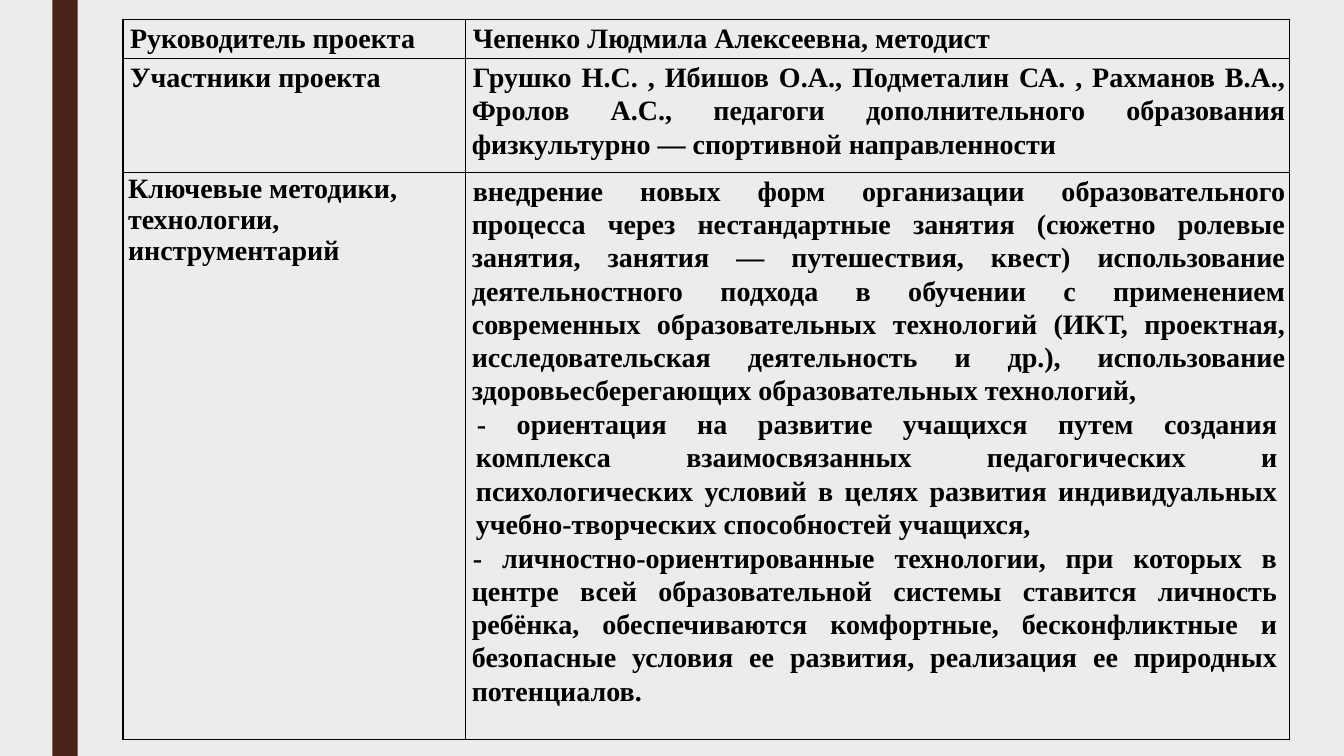
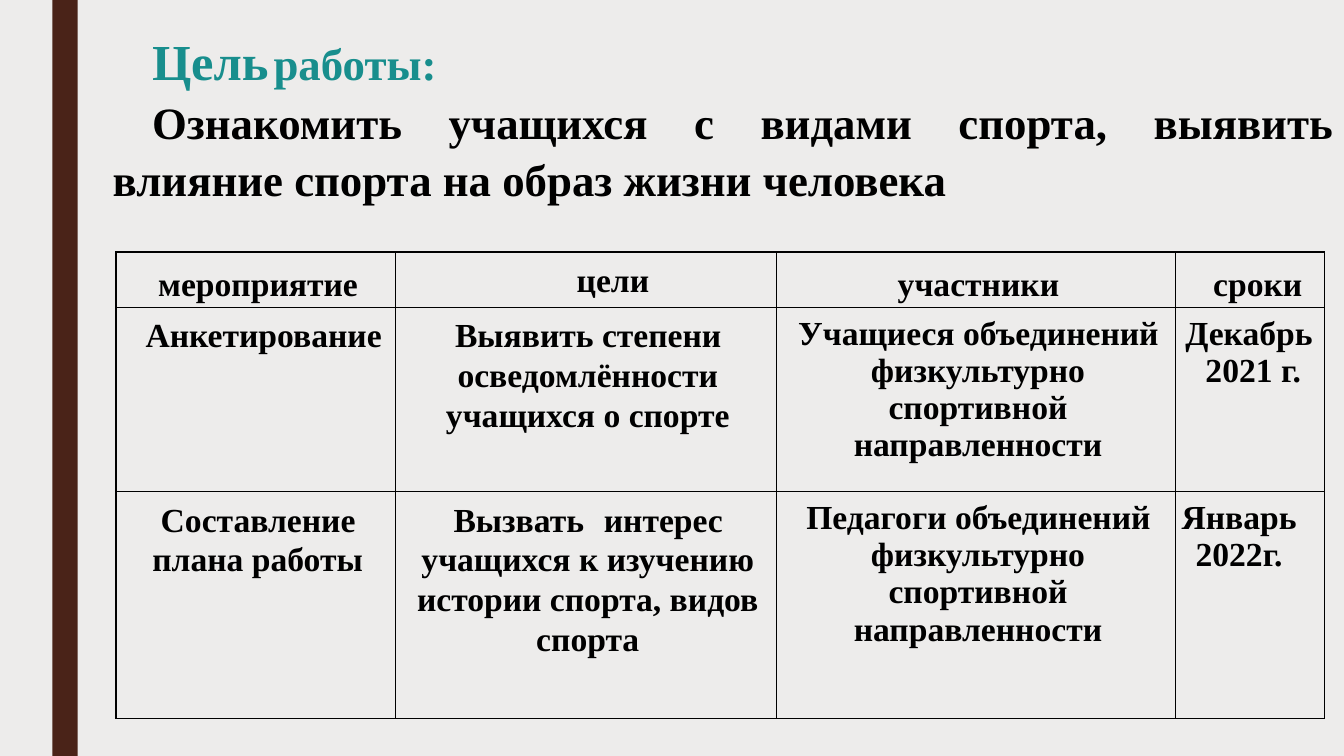
from pptx import Presentation
from pptx.dml.color import RGBColor
from pptx.enum.shapes import MSO_SHAPE
from pptx.enum.text import MSO_ANCHOR, PP_ALIGN
from pptx.oxml import parse_xml
from pptx.oxml.ns import nsdecls
from pptx.util import Inches, Pt

BACKGROUND, BAND, ACCENT, INK = "EDECEB", "4A2318", "188E8D", "000000"
FONT = "Times New Roman"
LEFT, CENTER, JUSTIFY = PP_ALIGN.LEFT, PP_ALIGN.CENTER, PP_ALIGN.JUSTIFY
TOP, BOTTOM = MSO_ANCHOR.TOP, MSO_ANCHOR.BOTTOM


def write_paragraph(paragraph, runs, align, left=0.02, first=0.01, spacing=1.07, right=0):
    formats = {"alignment": align, "line_spacing": spacing,
               "space_before": Pt(0), "space_after": Pt(0)}
    for name, value in formats.items():
        setattr(paragraph, name, value)
    margins = {"marL": left, "marR": right, "indent": first}
    for name, value in margins.items():
        paragraph._p.get_or_add_pPr().set(name, str(Inches(value)))
    for text, size, color in runs:
        run = paragraph.add_run()
        run.text = text
        for name, value in {"name": FONT, "size": Pt(size), "bold": True}.items():
            setattr(run.font, name, value)
        run.font.color.rgb = RGBColor.from_string(color)


def add_grid(slide, left, top, widths, heights, insets, size, rows):
    table = slide.shapes.add_table(
        len(heights), len(widths), Inches(left), Inches(top),
        Inches(sum(widths)), Inches(sum(heights))).table
    table.first_row = table.horz_banding = False
    for column, width in zip(table.columns, widths):
        column.width = Inches(width)
    for row, height in zip(table.rows, heights):
        row.height = Inches(height)
    sides = ("margin_left", "margin_top", "margin_right", "margin_bottom")
    for row, contents in zip(table.rows, rows):
        for cell, (anchor, paragraphs) in zip(row.cells, contents):
            cell.vertical_anchor = anchor
            for side, inset in zip(sides, insets):
                setattr(cell, side, Inches(inset))
            for edge in ("lnL", "lnR", "lnT", "lnB"):
                cell._tc.get_or_add_tcPr().append(parse_xml(
                    f'<a:{edge} {nsdecls("a")} w="{Pt(1)}"><a:solidFill>'
                    f'<a:srgbClr val="{INK}"/></a:solidFill></a:{edge}>'))
            cell.fill.background()
            for index, (text, layout) in enumerate(paragraphs):
                frame = cell.text_frame
                paragraph = frame.add_paragraph() if index else frame.paragraphs[0]
                write_paragraph(paragraph, [(text, size, INK)], **layout)


presentation = Presentation()
presentation.slide_width = Inches(13.33)
presentation.slide_height = Inches(7.5)
master_fill = presentation.slide_master.background.fill
master_fill.solid()
master_fill.fore_color.rgb = RGBColor.from_string(BACKGROUND)

slides = []
for number in range(2):
    slide = presentation.slides.add_slide(presentation.slide_layouts[6])
    band = slide.shapes.add_shape(
        MSO_SHAPE.RECTANGLE, Inches(0.52), 0, Inches(0.25), presentation.slide_height)
    band.shadow.inherit = False
    band.fill.solid()
    band.fill.fore_color.rgb = RGBColor.from_string(BAND)
    band.line.fill.background()
    slides.append(slide)
project_slide, goal_slide = slides

label = dict(align=LEFT)
body = dict(align=JUSTIFY)
project_rows = [
    [(TOP, [("Руководитель проекта", label)]),
     (TOP, [("Чепенко Людмила Алексеевна, методист", label)])],
    [(TOP, [("Участники проекта", label)]),
     (TOP, [("Грушко Н.С. , Ибишов О.А., Подметалин СА. , Рахманов В.А., "
             "Фролов А.С., педагоги дополнительного образования "
             "физкультурно — спортивной направленности", body)])],
    [(TOP, [("Ключевые методики, технологии, инструментарий",
             dict(align=LEFT, left=0.01, first=0, spacing=0.99))]),
     (TOP, [
         ("внедрение новых форм организации образовательного процесса через "
          "нестандартные занятия (сюжетно ролевые занятия, занятия — путешествия, "
          "квест) использование деятельностного подхода в обучении с применением "
          "современных образовательных технологий (ИКТ, проектная, "
          "исследовательская деятельность и др.), использование "
          "здоровьесберегающих образовательных технологий,", body),
         ("- ориентация на развитие учащихся путем создания комплекса "
          "взаимосвязанных педагогических и психологических условий в целях "
          "развития индивидуальных учебно-творческих способностей учащихся,",
          dict(align=JUSTIFY, left=0.06, spacing=1.08, right=0.08)),
         ("- личностно-ориентированные технологии, при которых в центре всей "
          "образовательной системы ставится личность ребёнка, обеспечиваются "
          "комфортные, бесконфликтные и безопасные условия ее развития, "
          "реализация ее природных потенциалов.",
          dict(align=JUSTIFY, right=0.08))])],
]
add_grid(project_slide, 1.22, 0.19, [3.4, 8.17], [0.39, 1.13, 5.63],
         (0.04, 0.02, 0.04, 0), 20, project_rows)

goal_box = goal_slide.shapes.add_textbox(
    Inches(1), Inches(0.21), Inches(12.33), Inches(3.41))
goal_frame = goal_box.text_frame
goal_frame.word_wrap = True
write_paragraph(goal_frame.paragraphs[0],
                [("Цель", 36, ACCENT), (" ", 14, ACCENT), ("работы:", 32, ACCENT)],
                JUSTIFY, first=0.39)
write_paragraph(goal_frame.add_paragraph(),
                [("Ознакомить учащихся с видами спорта, выявить влияние спорта "
                  "на образ жизни человека", 32, INK)],
                JUSTIFY, first=0.39)

centered = dict(align=CENTER, left=0.01)
single = dict(align=CENTER, left=0.01, spacing=1)
date = dict(align=CENTER, spacing=1)
goal_rows = [
    [(BOTTOM, [("мероприятие", centered)]),
     (TOP, [("цели", dict(align=CENTER, left=0.5))]),
     (BOTTOM, [("участники", centered)]),
     (BOTTOM, [("сроки", dict(align=CENTER, left=0.11))])],
    [(TOP, [("Анкетирование", dict(align=CENTER, left=0.12))]),
     (TOP, [("Выявить степени осведомлённости учащихся о спорте", centered)]),
     (TOP, [("Учащиеся объединений физкультурно спортивной направленности", single)]),
     (TOP, [("Декабрь ", date), ("2021 г.", date)])],
    [(TOP, [("Составление плана работы", centered)]),
     (TOP, [("Вызвать\tинтерес учащихся к изучению истории спорта, видов спорта",
             centered)]),
     (TOP, [("Педагоги объединений физкультурно спортивной направленности", single)]),
     (TOP, [("Январь 2022г.", dict(align=CENTER, first=0, spacing=1, right=0.27))])],
]
add_grid(goal_slide, 1.15, 2.5, [2.77, 3.78, 3.96, 1.48], [0.54, 1.83, 2.25],
         (0.03, 0.08, 0, 0.04), 24, goal_rows)

presentation.save("out.pptx")
